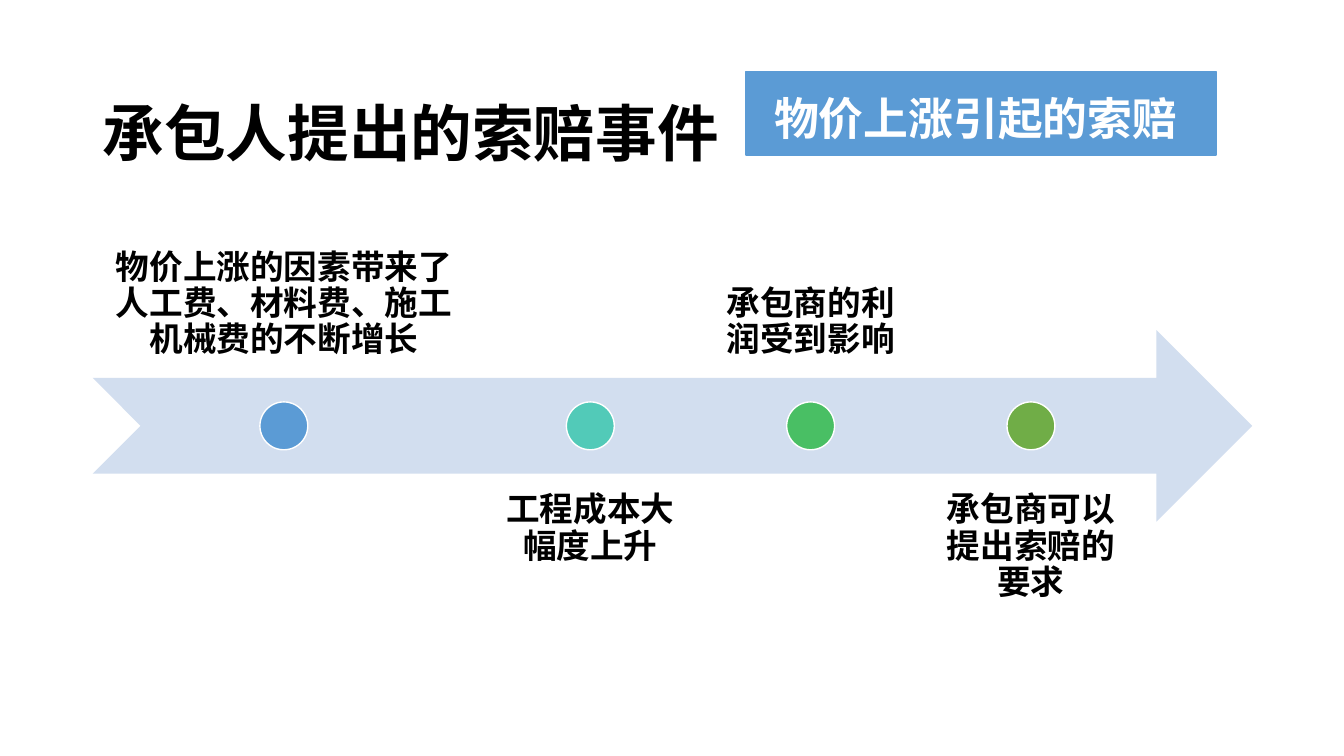
from lxml import etree
from pptx import Presentation
from pptx.dml.color import RGBColor
from pptx.enum.shapes import MSO_SHAPE as SHAPE
from pptx.enum.text import MSO_ANCHOR as ANCHOR, PP_ALIGN as ALIGN
from pptx.oxml.ns import qn
from pptx.util import Inches, Pt

SLIDE_W, SLIDE_H = 13.33, 7.5
LEFT, WIDTH = 0.92, 11.5
ROW = 1.9                  # height of the arrow and of each label row
LABEL_TOP = 1.85
ARROW_TOP = LABEL_TOP + ROW * 0.75
LOWER_TOP = LABEL_TOP + ROW * 1.5
DOT = ROW / 4
GAP = 0.105
CJK = "Noto Sans CJK SC"
SERIF = "Times New Roman"
BLUE = "5B9BD5"

# label, column width, dot colour
STAGES = [
    ("物价上涨的因素带来了人工费、材料费、施工机械费的不断增长", 3.79, BLUE),
    ("工程成本大幅度上升", 2.08, "52CAB8"),
    ("承包商的利润受到影响", 2.08, "49BF64"),
    ("承包商可以提出索赔的要求", 2.08, "70AD47"),
]


def rgb(value):
    return RGBColor.from_string(value)


def box(x, y, w, h):
    return [Inches(v) for v in (x, y, w, h)]


def write(sp, text, size, font, color="000000", anchor=ANCHOR.MIDDLE,
          align=ALIGN.CENTER, spacing=1.0, insets=(0.1, 0.05)):
    dx, dy = (Inches(v) for v in insets)
    tf = sp.text_frame
    frame = {"word_wrap": True, "vertical_anchor": anchor,
             "margin_left": dx, "margin_right": dx,
             "margin_top": dy, "margin_bottom": dy}
    for name, value in frame.items():
        setattr(tf, name, value)
    p = tf.paragraphs[0]
    p.alignment, p.line_spacing = align, spacing
    r = p.add_run()
    r.text = text
    for name, value in {"size": Pt(size), "bold": True, "name": font}.items():
        setattr(r.font, name, value)
    r.font.color.rgb = rgb(color)
    ea = etree.SubElement(r.font._element, qn("a:ea"))
    ea.set("typeface", CJK)


def add_text(slide, place, text, size, font, **style):
    write(slide.shapes.add_textbox(*box(*place)), text, size, font, **style)


def add_solid(slide, kind, place, fill, line=None):
    sp = slide.shapes.add_shape(kind, *box(*place))
    sp.shadow.inherit = False
    sp.fill.solid()
    sp.fill.fore_color.rgb = rgb(fill)
    if line:
        sp.line.color.rgb = rgb(line)
        sp.line.width = Pt(1)
    else:
        sp.line.fill.background()
    return sp


def add_timeline(slide):
    add_solid(slide, SHAPE.NOTCHED_RIGHT_ARROW,
              (LEFT, ARROW_TOP, WIDTH, ROW), "D2DEEF")
    x = LEFT
    for i, (label, width, color) in enumerate(STAGES):
        above = i % 2 == 0
        top = LABEL_TOP if above else LOWER_TOP
        add_text(slide, (x, top, width, ROW), label, 24, CJK,
                 anchor=ANCHOR.BOTTOM if above else ANCHOR.TOP,
                 spacing=0.9, insets=(0.19, 0.19))
        add_solid(slide, SHAPE.OVAL,
                  (x + (width - DOT) / 2, ARROW_TOP + (ROW - DOT) / 2, DOT, DOT),
                  color, "FFFFFF")
        x += width + GAP


def main():
    prs = Presentation()
    prs.slide_width, prs.slide_height = Inches(SLIDE_W), Inches(SLIDE_H)
    slide = prs.slides.add_slide(prs.slide_layouts[6])
    add_text(slide, (LEFT, 0.4, WIDTH, 1.45), "承包人提出的索赔事件", 44, SERIF,
             align=ALIGN.LEFT, spacing=1.5)
    add_timeline(slide)
    banner = add_solid(slide, SHAPE.RECTANGLE, (7.4, 0.71, 4.66, 0.83), BLUE, BLUE)
    write(banner, "物价上涨引起的索赔 ", 32, SERIF, color="FFFFFF",
          spacing=1.14, insets=(0.25, 0.14))
    prs.save("out.pptx")


if __name__ == "__main__":
    main()
